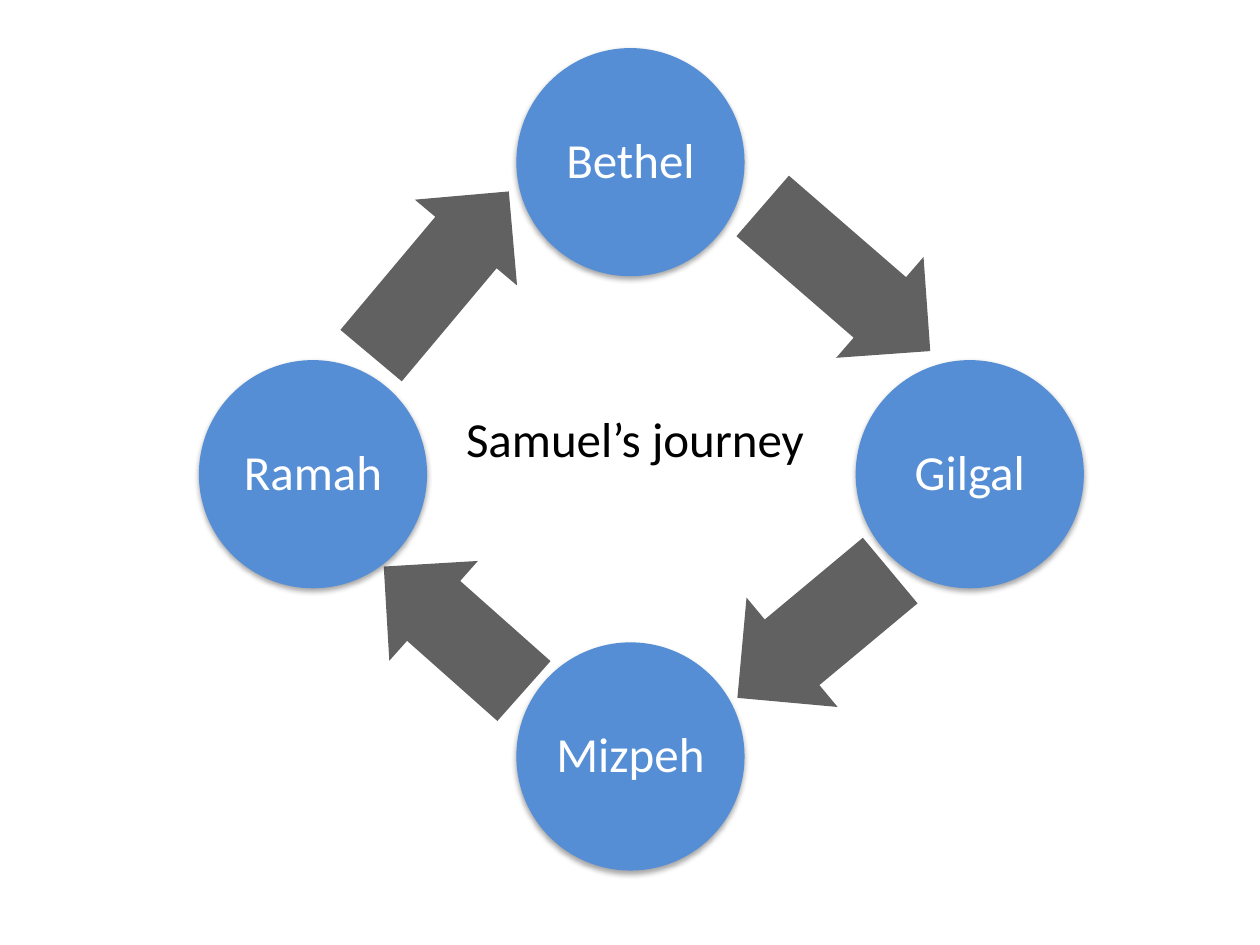
from dataclasses import dataclass

from lxml import etree
from pptx import Presentation
from pptx import util as u
from pptx.dml.color import RGBColor
from pptx.enum import shapes, text
from pptx.oxml import ns

BLUE, GREY, WHITE, BLACK = "558ED5", "595959", "FFFFFF", "000000"
DIAMETER = 4.6


@dataclass
class Stop:
    """A town on the circuit; lengths in cm."""
    name: str
    left: float
    top: float


@dataclass
class Leg:
    """An arrow to the next town; lengths in cm, rotation in degrees."""
    left: float
    top: float
    width: float
    height: float
    rotation: float


STOPS = [
    Stop("Bethel", 10.41, 0.97),
    Stop("Gilgal", 17.25, 7.26),
    Stop("Mizpeh", 10.41, 12.95),
    Stop("Ramah", 4.01, 7.26),
]
LEGS = [
    Leg(14.83, 4.27, 4.47, 2.69, 40.9),
    Leg(14.4, 11.35, 4.01, 2.87, 140.2),
    Leg(7.26, 11.33, 3.78, 2.69, 221.6),
    Leg(6.71, 4.17, 4.32, 2.69, 310),
]


def paint(fmt, color: str) -> None:
    """Give a fill a solid colour."""
    fmt.solid()
    fmt.fore_color.rgb = RGBColor.from_string(color)


def add_alpha(clr, percent: int) -> None:
    etree.SubElement(clr, ns.qn("a:alpha"), val=str(percent * 1000))


def style_text(tf, color: str, align) -> None:
    tf.vertical_anchor = text.MSO_ANCHOR.MIDDLE
    p = tf.paragraphs[0]
    p.alignment = align
    for r in p.runs:
        r.font.size = u.Pt(28)
        r.font.name = "Calibri"
        paint(r.font.fill, color)


def add_soft_shadow(sp) -> None:
    effects = sp._element.spPr.find(ns.qn("a:effectLst"))
    shadow = etree.SubElement(
        effects, ns.qn("a:outerShdw"), blurRad=str(u.Pt(3.1)),
        dist=str(u.Pt(1.8)), dir="5400000", rotWithShape="0")
    add_alpha(etree.SubElement(shadow, ns.qn("a:srgbClr"), val=BLACK), 35)


def add_stop(group, stop: Stop) -> None:
    sp = group.shapes.add_shape(
        shapes.MSO_SHAPE.OVAL, u.Cm(stop.left), u.Cm(stop.top),
        u.Cm(DIAMETER), u.Cm(DIAMETER))
    paint(sp.fill, BLUE)
    sp.line.fill.background()
    sp.shadow.inherit = False
    add_soft_shadow(sp)
    tf = sp.text_frame
    tf.text = stop.name
    tf.margin_left = tf.margin_right = u.Cm(0.1)
    tf.margin_top = tf.margin_bottom = u.Cm(0.1)
    tf.paragraphs[0].line_spacing = 0.9
    style_text(tf, WHITE, text.PP_ALIGN.CENTER)


def add_leg(group, leg: Leg) -> None:
    sp = group.shapes.add_shape(
        shapes.MSO_SHAPE.RIGHT_ARROW, u.Cm(leg.left), u.Cm(leg.top),
        u.Cm(leg.width), u.Cm(leg.height))
    sp.rotation = leg.rotation
    sp.adjustments[0], sp.adjustments[1] = 0.6, 0.5
    paint(sp.fill, GREY)
    add_alpha(sp._element.spPr.find(".//" + ns.qn("a:srgbClr")), 95)
    sp.line.fill.background()
    sp.shadow.inherit = False


def main() -> None:
    prs = Presentation()
    prs.slide_width, prs.slide_height = u.Cm(25.4), u.Cm(19.05)
    s = prs.slides.add_slide(prs.slide_layouts[5])

    # Cycle of towns and arrows
    group = s.shapes.add_group_shape()
    for stop, leg in zip(STOPS, LEGS):
        add_stop(group, stop)
        add_leg(group, leg)

    # Title in the middle of the cycle
    title = s.shapes.title
    title.left, title.top = u.Cm(9.14), u.Cm(8.1)
    title.width, title.height = u.Cm(7.72), u.Cm(1.45)
    tf = title.text_frame
    tf.text = "Samuel’s journey"
    tf.auto_size = text.MSO_AUTO_SIZE.NONE
    style_text(tf, BLACK, text.PP_ALIGN.LEFT)

    prs.save("out.pptx")


if __name__ == "__main__":
    main()
